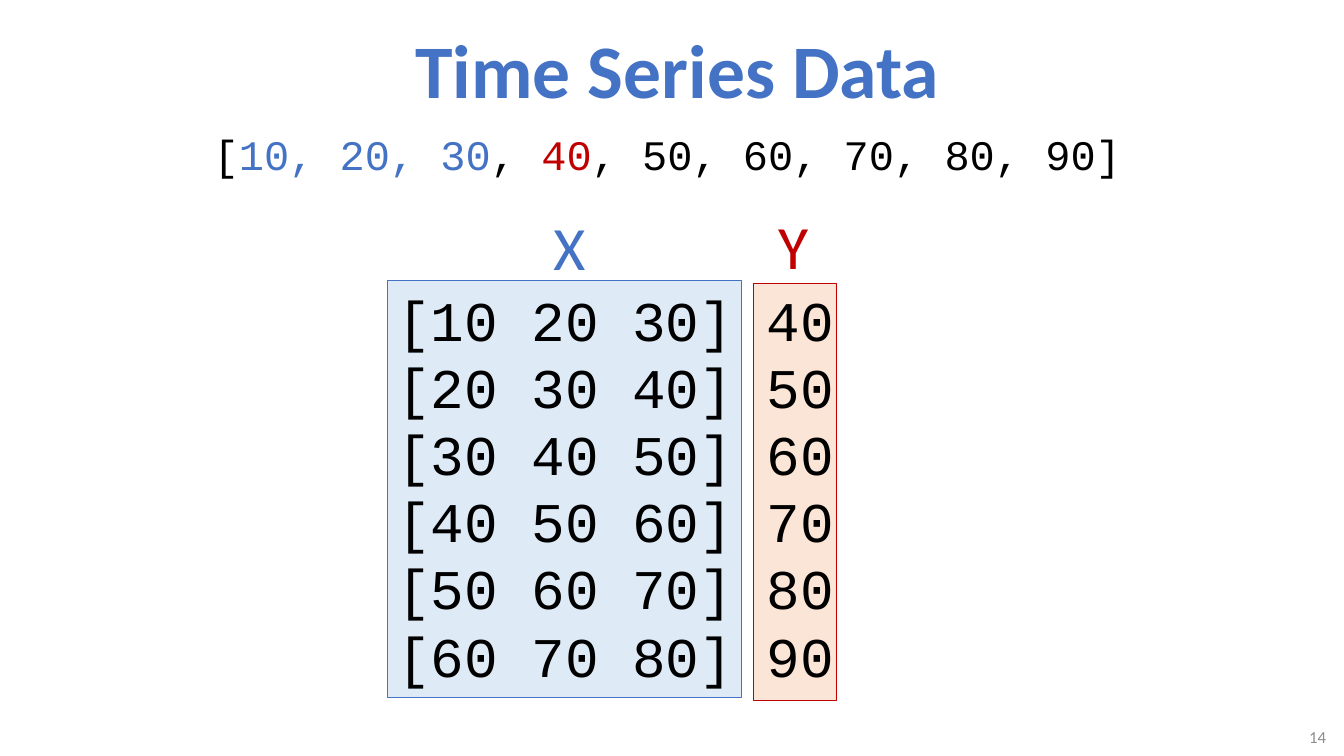
from pptx import Presentation
from pptx.dml.color import RGBColor
from pptx.enum.shapes import MSO_SHAPE as Shape
from pptx.enum.text import MSO_ANCHOR as Anchor, PP_ALIGN as Align
from pptx.util import Inches, Pt

COLORS = {
    "blue": "4472C4",
    "red": "C00000",
    "black": "000000",
    "gray": "8C8C8C",
    "pale_blue": "DEEBF7",
    "pale_orange": "FBE5D6",
}
SERIES = range(10, 100, 10)
WINDOW = 3


def color(name):
    return RGBColor.from_string(COLORS[name])


def set_font(font, name, size, color_name):
    font.name = name
    font.size = Pt(size)
    font.color.rgb = color(color_name)


presentation = Presentation()
presentation.slide_width = Inches(13.33)
presentation.slide_height = Inches(7.5)
slide = presentation.slides.add_slide(presentation.slide_layouts[5])
shapes = slide.shapes

for left, top, width, fill, line in [
    (7.47, 2.81, 0.83, "pale_orange", "red"),
    (3.84, 2.78, 3.51, "pale_blue", "blue"),
]:
    panel = shapes.add_shape(
        Shape.RECTANGLE, Inches(left), Inches(top), Inches(width), Inches(4.14)
    )
    panel.shadow.inherit = False
    panel.fill.solid()
    panel.fill.fore_color.rgb = color(fill)
    panel.line.color.rgb = color(line)
    panel.line.width = Pt(0.5)

title = shapes.title
title.left, title.top = Inches(2.22), Inches(0.14)
title.width, title.height = Inches(9), Inches(1.08)
title.text_frame.text = "Time Series Data"
title.text_frame.vertical_anchor = Anchor.MIDDLE
paragraph = title.text_frame.paragraphs[0]
paragraph.alignment = Align.CENTER
set_font(paragraph.font, "Calibri", 54, "blue")
paragraph.font.bold = True

page_number = shapes.add_textbox(Inches(12.2), Inches(7.18), Inches(1.05), Inches(0.26))
page_number.text_frame.word_wrap = True
page_number.text_frame.vertical_anchor = Anchor.MIDDLE
paragraph = page_number.text_frame.paragraphs[0]
paragraph.text = "14"
paragraph.alignment = Align.RIGHT
set_font(paragraph.font, "Calibri", 12, "gray")

series_box = shapes.add_textbox(Inches(2.02), Inches(1.23), Inches(9.29), Inches(0.61))
series_box.text_frame.word_wrap = False
paragraph = series_box.text_frame.paragraphs[0]
for text, color_name in [
    ("[", "black"),
    ("10, 20, 30", "blue"),
    (", ", "black"),
    ("40", "red"),
    (", 50, 60, 70, 80, 90]", "black"),
]:
    run = paragraph.add_run()
    run.text = text
    set_font(run.font, "Courier New", 30, color_name)

samples = shapes.add_textbox(Inches(3.84), Inches(2.78), Inches(5), Inches(4.14))
samples.text_frame.word_wrap = True
rows = []
for start in range(len(SERIES) - WINDOW):
    inputs = " ".join(str(value) for value in SERIES[start:start + WINDOW])
    rows.append(f"[{inputs}] {SERIES[start + WINDOW]}")
samples.text_frame.text = "\n".join(rows)
for paragraph in samples.text_frame.paragraphs:
    set_font(paragraph.font, "Courier New", 40, "black")

for label, left, top, color_name in [("X", 5.39, 2.02, "blue"), ("Y", 7.62, 2.01, "red")]:
    heading = shapes.add_textbox(Inches(left), Inches(top), Inches(0.52), Inches(0.84))
    heading.text_frame.word_wrap = False
    paragraph = heading.text_frame.paragraphs[0]
    paragraph.text = label
    set_font(paragraph.font, "Calibri", 44, color_name)

presentation.save("out.pptx")
